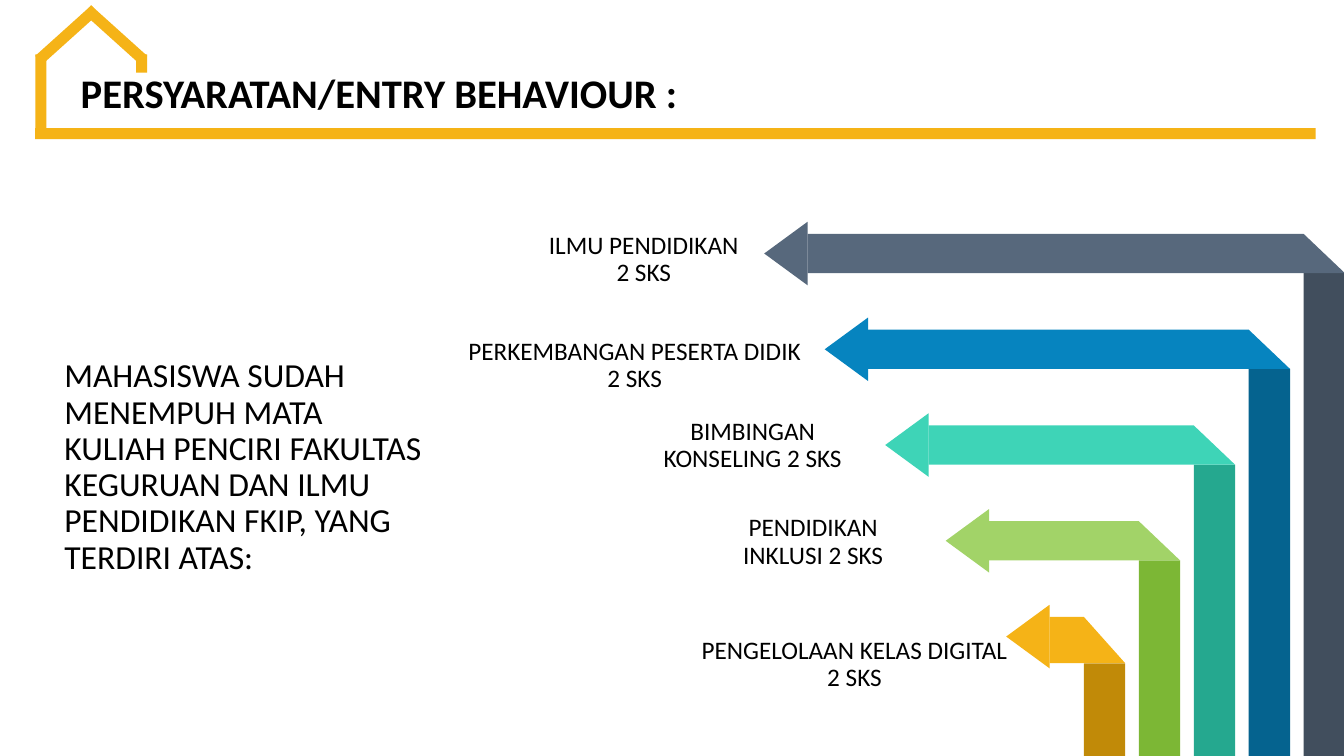
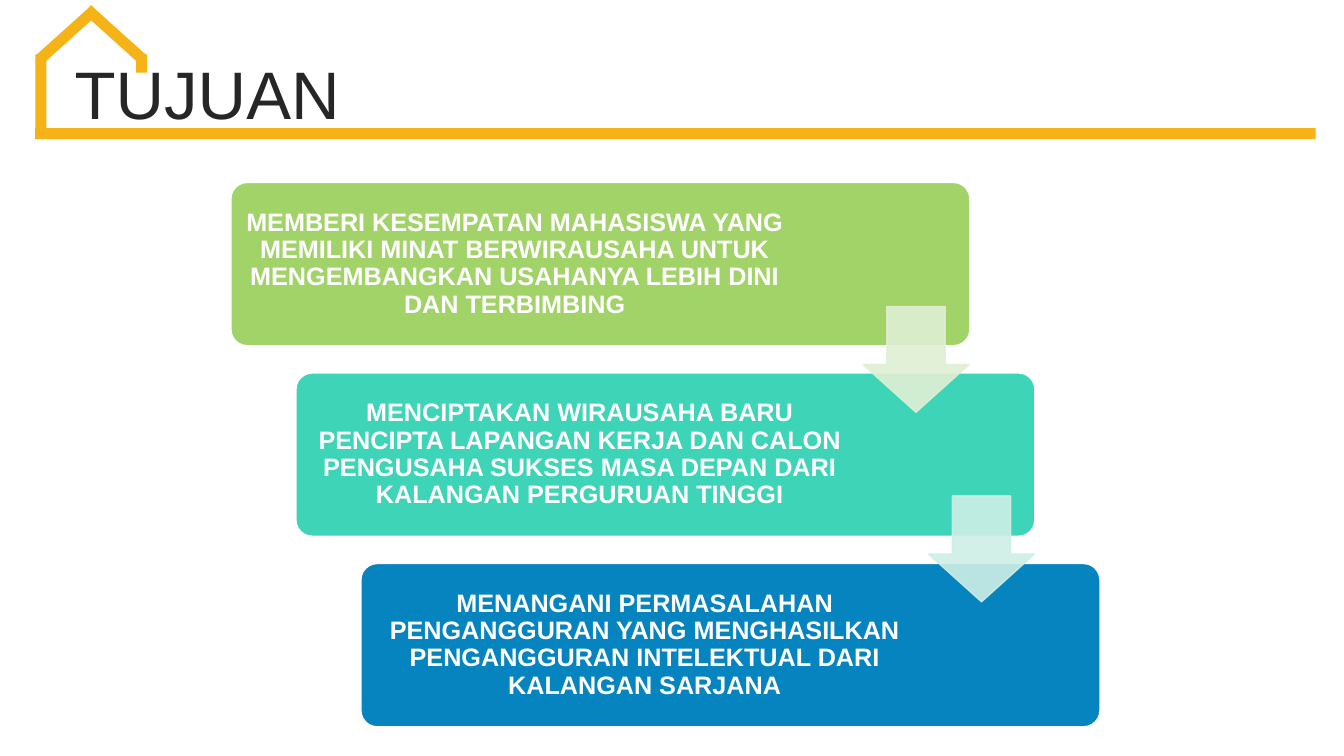
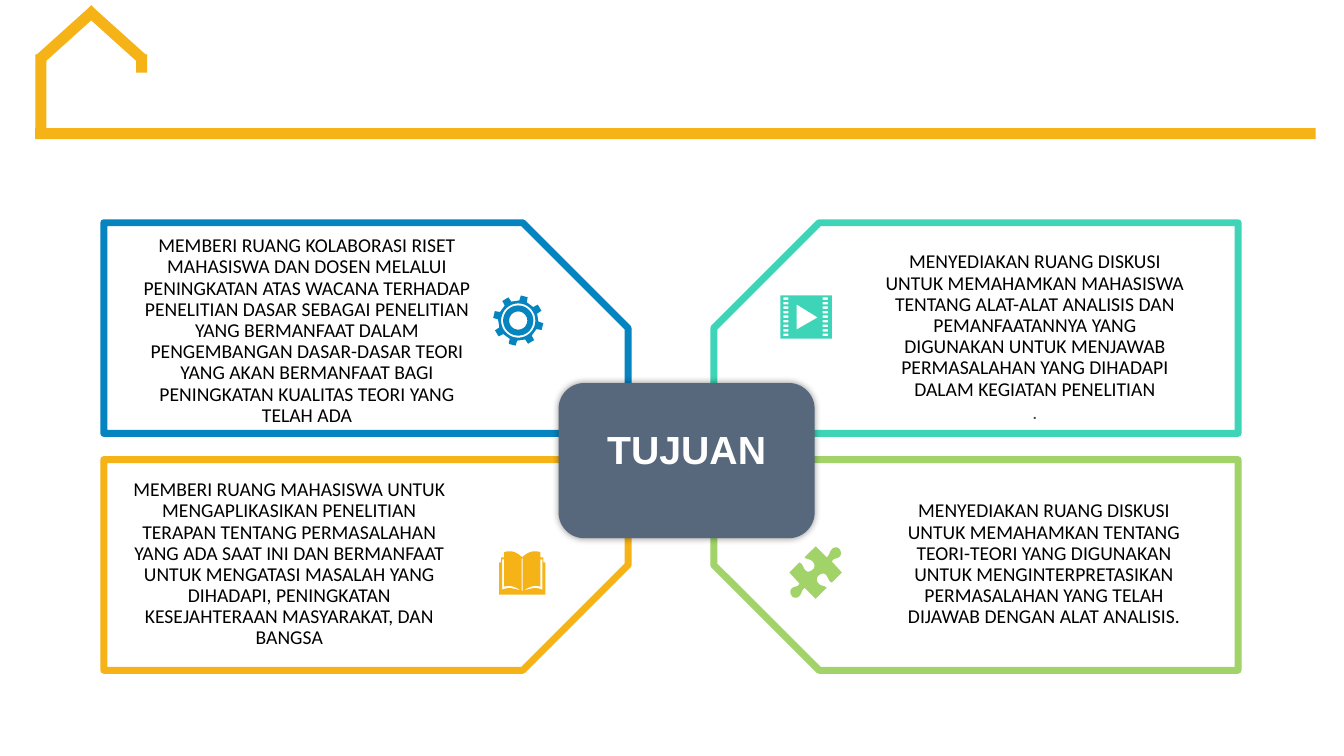
from math import cos, radians, sin

from lxml import etree
from pptx import Presentation
from pptx.dml.color import RGBColor
from pptx.enum.shapes import MSO_SHAPE
from pptx.enum.text import MSO_ANCHOR, MSO_AUTO_SIZE, PP_ALIGN
from pptx.oxml.ns import qn
from pptx.util import Inches, Pt

RECT = MSO_SHAPE.RECTANGLE
ROUNDED = MSO_SHAPE.ROUNDED_RECTANGLE
TRIANGLE = MSO_SHAPE.ISOSCELES_TRIANGLE
DOWN_ARROW = MSO_SHAPE.DOWN_ARROW
SNIPPED = MSO_SHAPE.SNIP_1_RECTANGLE
LEFT, CENTER = PP_ALIGN.LEFT, PP_ALIGN.CENTER
TOP, MIDDLE = MSO_ANCHOR.TOP, MSO_ANCHOR.MIDDLE
NO_FIT = MSO_AUTO_SIZE.NONE

WHITE = RGBColor(0xFF, 0xFF, 0xFF)
BLACK = RGBColor(0x00, 0x00, 0x00)
INK = RGBColor(0x26, 0x26, 0x26)
GRAY = RGBColor(0x40, 0x40, 0x40)
SLATE = RGBColor(0x57, 0x68, 0x7C)
DARK_SLATE = RGBColor(0x41, 0x4E, 0x5D)
BLUE = RGBColor(0x06, 0x84, 0xBF)
DARK_BLUE = RGBColor(0x05, 0x63, 0x8F)
TEAL = RGBColor(0x3E, 0xD4, 0xB7)
DARK_TEAL = RGBColor(0x25, 0xA8, 0x8F)
PALE_TEAL = RGBColor(0xCE, 0xEF, 0xE6)
GREEN = RGBColor(0xA2, 0xD3, 0x68)
DARK_GREEN = RGBColor(0x7C, 0xB7, 0x35)
PALE_GREEN = RGBColor(0xE0, 0xEF, 0xD4)
AMBER = RGBColor(0xF5, 0xB3, 0x17)
DARK_AMBER = RGBColor(0xC1, 0x8A, 0x08)

SLIDE_W, SLIDE_H = 13.33, 7.5
TITLE_ONLY, BLANK = 5, 6

HOUSE_BARS = [
    ((0.35, 1.27, 12.7, 0.11), 0),
    ((0.35, 0.54, 0.11, 0.8), 0),
    ((1.35, 0.54, 0.11, 0.18), 0),
    ((0.61, -0.03, 0.11, 0.75), 48),
    ((1.09, -0.03, 0.11, 0.75), 312),
]

COURSES = [
    ("ILMU PENDIDIKAN\n2 SKS", (4.97, 2.26, 2.83, 0.65), SLATE, DARK_SLATE),
    ("PERKEMBANGAN PESERTA DIDIK 2 SKS", (4.53, 3.31, 3.53, 0.65), BLUE, DARK_BLUE),
    ("BIMBINGAN KONSELING 2 SKS", (6.19, 4.1, 2.55, 0.65), TEAL, DARK_TEAL),
    ("PENDIDIKAN INKLUSI 2 SKS", (7.07, 5.06, 1.99, 0.65), GREEN, DARK_GREEN),
    ("PENGELOLAAN KELAS DIGITAL 2 SKS", (6.78, 6.28, 3.39, 0.65), AMBER, DARK_AMBER),
]

REQUIREMENT = ("MAHASISWA SUDAH MENEMPUH MATA KULIAH PENCIRI FAKULTAS KEGURUAN "
               "DAN ILMU PENDIDIKAN FKIP, YANG TERDIRI ATAS:")

GOALS = [
    ("MEMBERI KESEMPATAN MAHASISWA YANG MEMILIKI MINAT BERWIRAUSAHA UNTUK "
     "MENGEMBANGKAN USAHANYA LEBIH DINI DAN TERBIMBING", GREEN),
    ("MENCIPTAKAN WIRAUSAHA BARU PENCIPTA LAPANGAN KERJA DAN CALON PENGUSAHA "
     "SUKSES MASA DEPAN DARI KALANGAN PERGURUAN TINGGI", TEAL),
    ("MENANGANI PERMASALAHAN PENGANGGURAN YANG MENGHASILKAN PENGANGGURAN "
     "INTELEKTUAL DARI KALANGAN SARJANA", BLUE),
]

RESEARCH = ("MEMBERI RUANG KOLABORASI RISET MAHASISWA DAN DOSEN MELALUI PENINGKATAN "
            "ATAS WACANA TERHADAP PENELITIAN DASAR SEBAGAI PENELITIAN YANG BERMANFAAT "
            "DALAM PENGEMBANGAN DASAR-DASAR TEORI YANG AKAN BERMANFAAT BAGI "
            "PENINGKATAN KUALITAS TEORI YANG TELAH ADA")
APPLICATION = ("MEMBERI RUANG MAHASISWA UNTUK MENGAPLIKASIKAN PENELITIAN TERAPAN "
               "TENTANG PERMASALAHAN YANG ADA SAAT INI DAN BERMANFAAT UNTUK MENGATASI "
               "MASALAH YANG DIHADAPI, PENINGKATAN KESEJAHTERAAN MASYARAKAT, DAN BANGSA")
ANALYSIS = ("MENYEDIAKAN RUANG DISKUSI UNTUK MEMAHAMKAN MAHASISWA TENTANG ALAT-ALAT "
            "ANALISIS DAN PEMANFAATANNYA YANG DIGUNAKAN UNTUK MENJAWAB PERMASALAHAN "
            "YANG DIHADAPI DALAM KEGIATAN PENELITIAN")
THEORY = ("MENYEDIAKAN RUANG DISKUSI UNTUK MEMAHAMKAN TENTANG TEORI-TEORI YANG "
          "DIGUNAKAN UNTUK MENGINTERPRETASIKAN PERMASALAHAN YANG TELAH DIJAWAB "
          "DENGAN ALAT ANALISIS.")

PANELS = [
    ((1.03, 2.21), "", BLUE, RESEARCH, (1.24, 2.29, 3.61, 2.01)),
    ((7.08, 2.21), "H", TEAL, ANALYSIS, (8.66, 2.45, 3.21, 1.82)),
    ((1.03, 4.56), "V", AMBER, APPLICATION, (1.19, 4.71, 3.36, 1.8)),
    ((7.08, 4.56), "HV", GREEN, THEORY, (8.75, 4.92, 3.21, 1.37)),
]

BOOK_HALF = [(0, 0.06), (-0.04, 0.02, -0.08, 0, -0.12, 0), (-0.14, 0, -0.16, 0, -0.18, 0.01),
             (-0.18, 0.06), (-0.21, 0.06), (-0.21, 0.11), (-0.23, 0.11), (-0.23, 0.43)]
PAGE_GAP = [(-0.01, 0.39), (-0.07, 0.35, -0.13, 0.33, -0.18, 0.35), (-0.18, 0.08),
            (-0.2, 0.08), (-0.2, 0.38), (-0.13, 0.35, -0.08, 0.37, -0.01, 0.39)]
PUZZLE_HALF = [(0.23, -0.24), (0.25, -0.22, 0.26, -0.18, 0.24, -0.16),
               (0.21, -0.13, 0.18, -0.15, 0.16, -0.11), (0.26, 0), (0.16, 0.1),
               (0.12, 0.08, 0.13, 0.05, 0.1, 0.02), (0.08, 0, 0.05, 0.01, 0.03, 0.03),
               (0.01, 0.04, 0, 0.08, 0.03, 0.11), (0.06, 0.14, 0.07, 0.12, 0.11, 0.15),
               (0, 0.26), (-0.11, 0.15), (-0.15, 0.19, -0.13, 0.2, -0.16, 0.23),
               (-0.18, 0.26, -0.22, 0.25, -0.23, 0.24)]


def write(frame, text, *, size, font="Calibri", color=BLACK, bold=False, align=LEFT,
          anchor=TOP, spacing=0.9, append=False):
    """Write the lines of text as formatted paragraphs."""
    frame.word_wrap = True
    frame.auto_size = NO_FIT
    frame.vertical_anchor = anchor
    for number, line in enumerate(text.split("\n")):
        paragraph = frame.add_paragraph() if append or number else frame.paragraphs[0]
        paragraph.alignment = align
        paragraph.line_spacing = spacing
        run = paragraph.add_run()
        run.text = line
        run.font.size = Pt(size)
        run.font.name = font
        run.font.bold = bold
        run.font.color.rgb = color


def text_box(slide, box, text, **style):
    """Add a text box and return its text frame."""
    frame = slide.shapes.add_textbox(*map(Inches, box)).text_frame
    write(frame, text, **style)
    return frame


def paint(shape, fill, line=None, width=1):
    """Give a shape a flat fill and an optional outline."""
    shape.shadow.inherit = False
    shape.fill.solid()
    shape.fill.fore_color.rgb = fill
    if line is None:
        shape.line.fill.background()
    else:
        shape.line.color.rgb = line
        shape.line.width = Pt(width)
    return shape


def add_preset(slide, kind, box, fill, line=None, width=1, adjust=()):
    """Add a painted preset shape."""
    shape = slide.shapes.add_shape(kind, *map(Inches, box))
    for number, value in enumerate(adjust):
        shape.adjustments[number] = value
    return paint(shape, fill, line, width)


def add_outline(slide, contours, fill, x=0, y=0):
    """Add one freeform whose inner contours cut holes, offset by x and y."""
    placed = [[(Inches(x + px), Inches(y + py)) for px, py in contour] for contour in contours]
    builder = slide.shapes.build_freeform(*placed[0][0], scale=1.0)
    for number, contour in enumerate(placed):
        if number:
            builder.move_to(*contour[0])
        builder.add_line_segments(contour[1:], close=True)
    return paint(builder.convert_to_shape(), fill)


def flatten(segments, steps=6):
    """Turn points and cubic curves into a list of points."""
    points = []
    for segment in segments:
        if len(segment) == 2:
            points.append(segment)
            continue
        ends = [points[-1], segment[:2], segment[2:4], segment[4:]]
        for step in range(1, steps + 1):
            t = step / steps
            weights = ((1 - t) ** 3, 3 * t * (1 - t) ** 2, 3 * t * t * (1 - t), t ** 3)
            points.append(tuple(sum(w * end[axis] for w, end in zip(weights, ends))
                                for axis in (0, 1)))
    return points


def rectangle(x, y, w, h):
    """Return the corners of a rectangle."""
    return [(x, y), (x + w, y), (x + w, y + h), (x, y + h)]


def polar(radius, angle):
    """Return the point at a clockwise angle from the top."""
    return radius * sin(radians(angle)), -radius * cos(radians(angle))


def gear(slide, x, y):
    """Draw a gear with eight teeth around its centre."""
    rim = [polar(radius, 14 + 45 * tooth + turn) for tooth in range(8)
           for radius, turn in ((0.2, -11), (0.25, -8), (0.25, 8), (0.2, 11))]
    rings = [[polar(radius, angle) for angle in range(0, 360, 10)]
             for radius in (0.17, 0.15, 0.09)]
    add_outline(slide, [rim, *rings], BLUE, x, y)


def film(slide, x, y):
    """Draw a film frame with perforations and a play sign."""
    holes = [rectangle(left, 0.02 + 0.045 * row, 0.05, 0.025)
             for left in (0.03, 0.42) for row in range(9)]
    play = [(0.16, 0.09), (0.16, 0.34), (0.37, 0.22)]
    add_outline(slide, [rectangle(0, 0, 0.51, 0.43), play, *holes], TEAL, x, y)


def book(slide, x, y):
    """Draw an open book from the top of its spine."""
    left, gap = flatten(BOOK_HALF), flatten(PAGE_GAP)
    cover = left + [(-px, py) for px, py in reversed(left)]
    seam = rectangle(-0.005, 0.07, 0.01, 0.32)
    add_outline(slide, [cover, gap, [(-px, py) for px, py in gap], seam], AMBER, x, y)


def puzzle(slide, x, y):
    """Draw a puzzle piece that is symmetric about its centre."""
    half = flatten(PUZZLE_HALF)
    add_outline(slide, [half + [(-px, -py) for px, py in half]], GREEN, x, y)


def add_house(prs, slide):
    """Put the house outline on the master, behind every slide."""
    for number, (box, angle) in enumerate(HOUSE_BARS):
        bar = add_preset(slide, RECT, box, AMBER)
        bar.rotation = angle
        bar.element.nvSpPr.cNvPr.set("id", str(100 + number))
        prs.slide_master.shapes.element.insert(2 + number, bar.element)


def set_title(slide, text, x, y, **style):
    """Place and format the title."""
    title = slide.shapes.title
    title.left, title.top, title.width, title.height = map(Inches, (x, y, 12.31, 0.79))
    write(title.text_frame, text, anchor=MIDDLE, **style)


def folded_arrow(slide, tip, top, post, depth, light, dark):
    """Draw an arrow that rises from the slide edge and folds left."""
    width, neck, fold = 0.41, tip + 0.43, top + depth
    add_preset(slide, RECT, (post, fold, width, SLIDE_H - fold), dark)
    add_outline(slide, [[(neck, top), (post, top), (post + width, fold), (neck, fold)]], light)
    head = add_preset(slide, TRIANGLE, (tip - 0.1, top - 0.02, 0.63, 0.43), light)
    head.rotation = 270


def requirements_slide(slide):
    """Build the entry requirements with five arrows."""
    set_title(slide, "PERSYARATAN/ENTRY BEHAVIOUR :", 0.7, 0.55, size=29, bold=True)
    for row, (course, box, light, dark) in enumerate(COURSES):
        depth = 0.46 if row == len(COURSES) - 1 else 0.39
        folded_arrow(slide, 7.58 + 0.6 * row, 2.32 + 0.95 * row, 12.93 - 0.545 * row,
                     depth, light, dark)
        text_box(slide, box, course, size=18, align=CENTER)
    text_box(slide, (0.54, 3.51, 3.74, 2.28), REQUIREMENT, size=24)


def goal_step(slide, x, y, text, fill):
    """Draw one step of the staircase with its text at the left."""
    step = add_preset(slide, ROUNDED, (x, y, 7.33, 1.62), fill, WHITE, adjust=(0.1,))
    frame = step.text_frame
    frame.margin_left, frame.margin_right = Inches(0.07), Inches(1.77)
    write(frame, text, size=18, font="Arial", color=WHITE, bold=True, align=CENTER,
          anchor=MIDDLE)


def goals_slide(slide):
    """Build the three goals as a staircase."""
    set_title(slide, "TUJUAN", 0.64, 0.57, size=48, font="Arial", color=INK)
    for row, (goal, fill) in enumerate(GOALS):
        goal_step(slide, 2.29 + 0.645 * row, 1.81 + 1.89 * row, goal, fill)
    for row, tint in enumerate((PALE_GREEN, PALE_TEAL)):
        arrow = add_preset(slide, DOWN_ARROW, (8.56 + 0.65 * row, 3.04 + 1.88 * row, 1.05, 1.05),
                           tint, tint, adjust=(0.55, 0.45))
        for color in arrow.element.spPr.iter(qn("a:srgbClr")):
            etree.SubElement(color, qn("a:alpha"), val="90000")


def center_box(slide, box):
    """Draw the central box with a soft shadow."""
    center = add_preset(slide, ROUNDED, box, SLATE)
    effects = center.element.spPr.find(qn("a:effectLst"))
    shadow = etree.SubElement(effects, qn("a:outerShdw"), blurRad=str(Pt(5)), dist="0", dir="0",
                              algn="ctr", rotWithShape="0")
    color = etree.SubElement(shadow, qn("a:srgbClr"), val=str(BLACK))
    etree.SubElement(color, qn("a:alpha"), val="40000")
    center.text_frame.margin_bottom = Inches(0.28)
    write(center.text_frame, "TUJUAN", size=28, font="Arial", color=WHITE, bold=True,
          align=CENTER, anchor=MIDDLE, spacing=1.0)


def panels_slide(slide):
    """Build four panels around the central box."""
    for corner, flips, color, _, _ in PANELS:
        panel = add_preset(slide, SNIPPED, (*corner, 5.2, 2.09), WHITE, color, 5, (0.5,))
        for axis in flips:
            panel.element.spPr.get_or_add_xfrm().set("flip" + axis, "1")
    center_box(slide, (5.54, 3.8, 2.54, 1.54))
    for _, _, _, text, box in PANELS:
        frame = text_box(slide, box, text, size=14, align=CENTER)
        if text == ANALYSIS:
            write(frame, ".", size=14, font="Arial", color=GRAY, align=CENTER, spacing=1.0,
                  append=True)
    gear(slide, 5.14, 3.18)
    film(slide, 7.74, 2.93)
    book(slide, 5.18, 5.47)
    puzzle(slide, 8.09, 5.68)


def main():
    """Build and save the presentation."""
    prs = Presentation()
    prs.slide_width, prs.slide_height = Inches(SLIDE_W), Inches(SLIDE_H)
    pages = [(requirements_slide, TITLE_ONLY), (goals_slide, TITLE_ONLY), (panels_slide, BLANK)]
    slides = [prs.slides.add_slide(prs.slide_layouts[layout]) for _, layout in pages]
    add_house(prs, slides[0])
    for (build, _), slide in zip(pages, slides):
        build(slide)
    prs.save("out.pptx")


if __name__ == "__main__":
    main()
